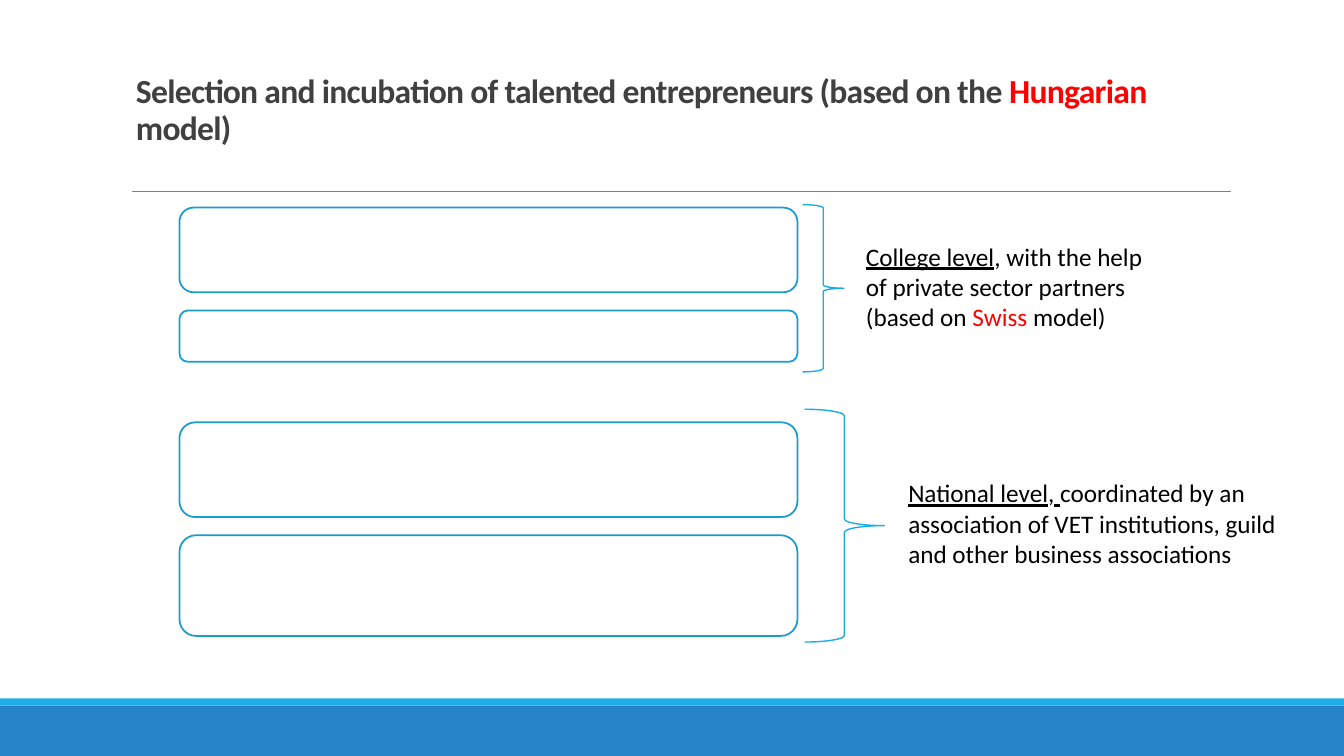
from dataclasses import dataclass

import pptx
import pptx.dml.color
import pptx.enum.shapes
import pptx.enum.text
import pptx.oxml.ns
import pptx.util
from pptx.util import Inches

SHAPE = pptx.enum.shapes.MSO_SHAPE
ANCHOR = pptx.enum.text.MSO_ANCHOR


@dataclass(frozen=True)
class Theme:
    font: str = "Calibri"
    title_size: int = 24
    note_size: int = 18
    title: str = "404040"
    text: str = "000000"
    country: str = "FF0000"
    white: str = "FFFFFF"
    footer: str = "2683C6"
    accent: str = "1CADE4"
    step_border: str = "199DCF"
    rule: str = "808080"


THEME = Theme()


def rgb(value):
    return pptx.dml.color.RGBColor.from_string(value)


def add_panel(slide, kind, box, fill=None, border=None, border_width=1):
    """Add a preset shape; without a fill or border colour that part is empty."""
    panel = slide.shapes.add_shape(kind, *map(Inches, box))
    panel.shadow.inherit = False
    if fill:
        panel.fill.solid()
        panel.fill.fore_color.rgb = rgb(fill)
    else:
        panel.fill.background()
    if border:
        panel.line.color.rgb = rgb(border)
        panel.line.width = pptx.util.Pt(border_width)
    else:
        panel.line.fill.background()


def add_title_rule(slide, left, right, top):
    rule = slide.shapes.add_connector(
        pptx.enum.shapes.MSO_CONNECTOR.STRAIGHT,
        Inches(left), Inches(top), Inches(right), Inches(top))
    rule.line.color.rgb = rgb(THEME.rule)
    rule.line.width = pptx.util.Pt(0.5)
    properties = rule._element.spPr
    properties.append(properties.makeelement(pptx.oxml.ns.qn("a:effectLst"), {}))


def add_text(slide, box, pieces, size, anchor=ANCHOR.TOP, bold=False):
    """Add one paragraph built from (text, colour, underlined) pieces."""
    frame = slide.shapes.add_textbox(*map(Inches, box)).text_frame
    frame.word_wrap = True
    frame.vertical_anchor = anchor
    paragraph = frame.paragraphs[0]
    for text, color, underlined in pieces:
        run = paragraph.add_run()
        run.text = text
        run.font.name = THEME.font
        run.font.size = pptx.util.Pt(size)
        run.font.bold = bold
        run.font.underline = underlined
        run.font.color.rgb = rgb(color)
    return paragraph


def add_title(slide):
    title = add_text(slide, (1.25, 0.43, 11, 1.08), [
        ("Selection and incubation of talented entrepreneurs (based on the ",
         THEME.title, False),
        ("Hungarian", THEME.country, False),
        (" model)", THEME.title, False),
    ], THEME.title_size, ANCHOR.BOTTOM, bold=True)
    title.line_spacing = 0.9
    title.space_before = pptx.util.Pt(12)
    title.space_after = pptx.util.Pt(2)
    for run in title.runs:
        run.font._element.set("spc", "-50")


def main():
    deck = pptx.Presentation()
    deck.slide_width, deck.slide_height = Inches(13.33), Inches(7.5)
    slide = deck.slides.add_slide(deck.slide_layouts[6])

    add_panel(slide, SHAPE.RECTANGLE, (0, 7, 13.33, 0.5), THEME.footer)
    add_panel(slide, SHAPE.RECTANGLE, (0, 6.93, 13.33, 0.07), THEME.accent)
    add_title_rule(slide, 1.31, 12.21, 1.9)
    add_title(slide)

    for top, height in [(2.06, 0.84), (3.08, 0.51), (4.19, 0.94), (5.31, 1)]:
        add_panel(slide, SHAPE.ROUNDED_RECTANGLE, (1.78, top, 6.13, height),
                  THEME.white, THEME.step_border, 1.25)

    college = [
        ("College level", THEME.text, True),
        (", with the help of private sector partners (based on ", THEME.text, False),
        ("Swiss", THEME.country, False),
        (" model)", THEME.text, False),
    ]
    national = [
        ("National level", THEME.text, True),
        (",", THEME.text, False),
        (" ", THEME.text, True),
        ("coordinated by an association of VET institutions, guild "
         "and other business associations", THEME.text, False),
    ]
    levels = [
        ((7.96, 2.03, 0.41, 1.66), (8.49, 2.34, 3.08, 1.01), college),
        ((7.98, 4.06, 0.79, 2.31), (8.91, 4.69, 3.95, 1.01), national),
    ]
    for brace_box, note_box, note in levels:
        add_panel(slide, SHAPE.RIGHT_BRACE, brace_box, border=THEME.accent)
        add_text(slide, note_box, note, THEME.note_size)

    deck.save("out.pptx")


if __name__ == "__main__":
    main()
